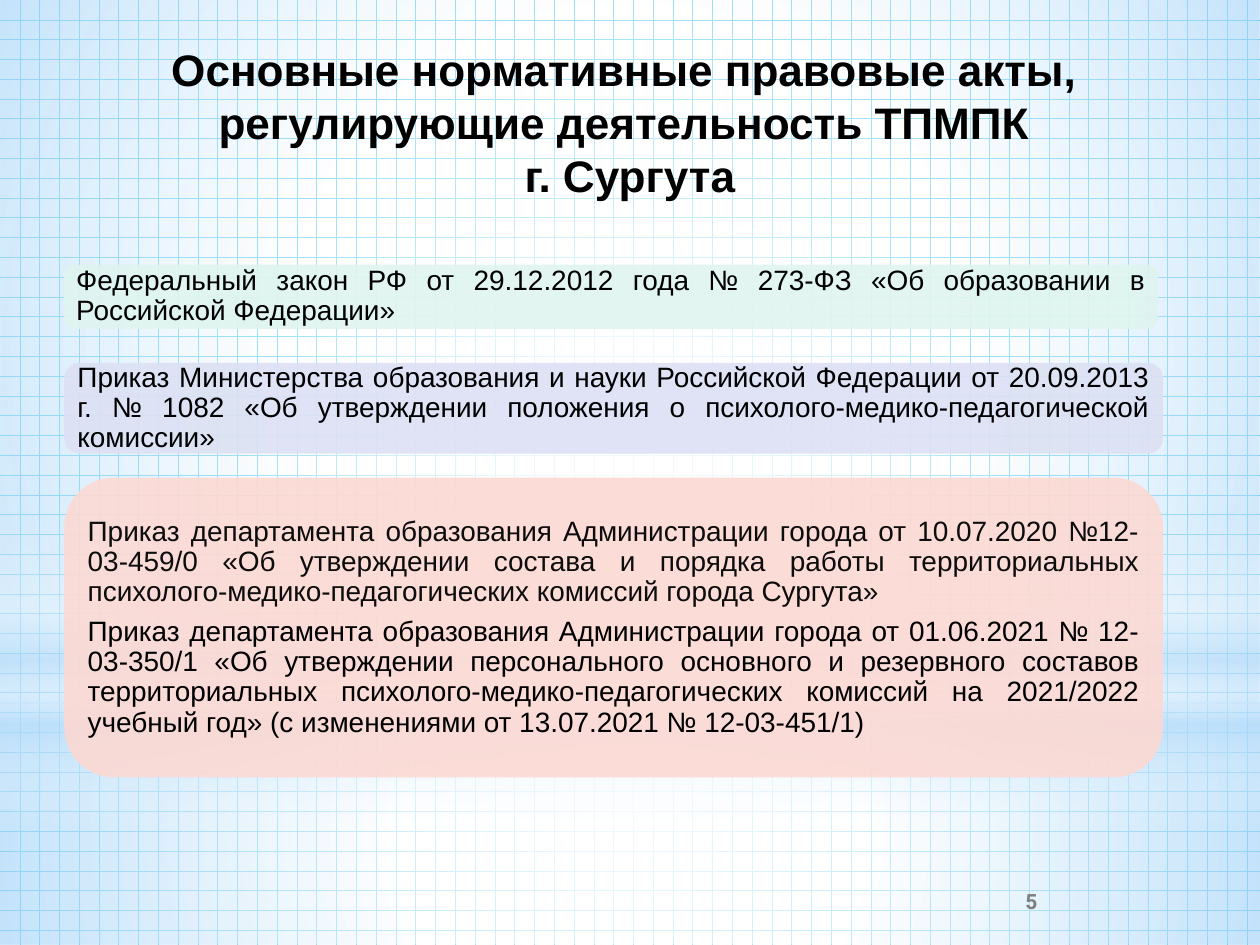
"""Build the slide listing the legal acts that govern the commission."""
from dataclasses import dataclass

from lxml import etree
from pptx import Presentation
from pptx.dml.color import RGBColor
from pptx.enum.dml import MSO_PATTERN
from pptx.enum.shapes import MSO_SHAPE
from pptx.enum.text import MSO_ANCHOR, PP_ALIGN
from pptx.oxml.ns import qn
from pptx.util import Inches, Pt

RECTANGLE, ELLIPSE, ROUNDED = MSO_SHAPE.RECTANGLE, MSO_SHAPE.OVAL, MSO_SHAPE.ROUNDED_RECTANGLE
DOTTED_GRID = MSO_PATTERN.DOTTED_GRID
TOP, MIDDLE = MSO_ANCHOR.TOP, MSO_ANCHOR.MIDDLE
CENTER, JUSTIFY = PP_ALIGN.CENTER, PP_ALIGN.JUSTIFY

BLACK = RGBColor(0x00, 0x00, 0x00)
NEAR_BLACK = RGBColor(0x0D, 0x0D, 0x0D)
GRAY = RGBColor(0x7F, 0x7F, 0x7F)
WHITE = RGBColor(0xFF, 0xFF, 0xFF)
SKY = RGBColor(0xB4, 0xDC, 0xFA)
GRID_BLUE = RGBColor(0x00, 0xB0, 0xF0)
MINT = RGBColor(0xDF, 0xF5, 0xEF)
LAVENDER = RGBColor(0xDC, 0xE1, 0xF4)
PINK = RGBColor(0xFC, 0xD9, 0xD3)

CARD_LEFT = 0.51
CARD_OPACITY = 90
CARD_INSET = Inches(0.07)
CARD_PARAGRAPH = {"alignment": JUSTIFY, "line_spacing": 0.9, "space_after": Pt(5.6)}
TITLE = "Основные нормативные правовые акты, \vрегулирующие деятельность ТПМПК \vг. Сургута"


@dataclass
class Glow:
    """A soft gradient area; each stop is position, colour and opacity in percent."""
    kind: int
    top: float
    height: float
    stops: list
    radial: bool = True


@dataclass
class Card:
    """A rounded card; each entry is a text and its colour."""
    top: float
    width: float
    height: float
    color: RGBColor
    entries: list


GLOWS = [
    Glow(RECTANGLE, 5.58, 1.92, [(0, WHITE, 91), (37, WHITE, 76), (100, SKY, 79)]),
    Glow(RECTANGLE, 0, 5.58, [(0, WHITE, 89), (48, WHITE, 62), (100, SKY, 79)]),
    Glow(RECTANGLE, 4.12, 2.5, [(0, WHITE, 0), (29, WHITE, 30), (45, SKY, 40),
                                (55, WHITE, 26), (65, SKY, 60), (100, WHITE, 0)], False),
    Glow(ELLIPSE, 1.75, 5.58, [(0, WHITE, 100), (56, WHITE, 0)]),
]

CARDS = [
    Card(2.1, 8.68, 0.51, MINT, [
        ("Федеральный закон РФ от 29.12.2012 года № 273-ФЗ «Об образовании в "
         "Российской Федерации»", BLACK)]),
    Card(2.88, 8.72, 0.72, LAVENDER, [
        ("Приказ Министерства образования и науки Российской Федерации от 20.09.2013 г. "
         "№ 1082 «Об утверждении положения о психолого-медико-педагогической комиссии»", BLACK)]),
    Card(3.79, 8.72, 2.38, PINK, [
        ("Приказ департамента образования Администрации города от 10.07.2020 №12-03-459/0 "
         "«Об утверждении состава и порядка работы территориальных "
         "психолого-медико-педагогических комиссий города Сургута»", NEAR_BLACK),
        ("Приказ департамента образования Администрации города от 01.06.2021 № 12-03-350/1 "
         "«Об утверждении персонального основного и резервного составов территориальных "
         "психолого-медико-педагогических комиссий на 2021/2022 учебный год» "
         "(с изменениями от 13.07.2021 № 12-03-451/1)", BLACK)]),
]


def apply(target: object, values: dict) -> None:
    """Set each named attribute on the target."""
    for name, value in values.items():
        setattr(target, name, value)


def add_alpha(color_element: etree.ElementBase, opacity: float) -> None:
    """Give a colour element an opacity in percent."""
    etree.SubElement(color_element, qn("a:alpha"), val=str(opacity * 1000))


def add_plain_shape(page, kind: int, left: float, top: float, width: float, height: float):
    """Add a shape without line or shadow."""
    shape = page.shapes.add_shape(kind, Inches(left), Inches(top), Inches(width), Inches(height))
    shape.shadow.inherit = False
    shape.line.fill.background()
    return shape


def add_glow(page, glow: Glow) -> None:
    """Draw a full-width gradient area."""
    shape = add_plain_shape(page, glow.kind, 0, glow.top, 10, glow.height)
    shape.fill.gradient()
    gradient = shape.element.spPr.find(qn("a:gradFill"))
    for child in list(gradient):
        gradient.remove(child)
    stop_list = etree.SubElement(gradient, qn("a:gsLst"))
    for position, color, opacity in glow.stops:
        stop = etree.SubElement(stop_list, qn("a:gs"), pos=str(position * 1000))
        add_alpha(etree.SubElement(stop, qn("a:srgbClr"), val=str(color)), opacity)
    if glow.radial:
        circle = etree.SubElement(gradient, qn("a:path"), {"path": "circle"})
        etree.SubElement(circle, qn("a:fillToRect"), dict.fromkeys("ltrb", "50000"))
    else:
        etree.SubElement(gradient, qn("a:lin"), ang="5400000", scaled="0")


def write(paragraph, text: str, layout: dict, font: dict, color: RGBColor) -> None:
    """Fill a paragraph with formatted text."""
    paragraph.text = text
    apply(paragraph, layout)
    for span in paragraph.runs:
        apply(span.font, font)
        span.font.color.rgb = color


def add_card(page, card: Card) -> None:
    """Draw a translucent rounded card with its justified text."""
    shape = add_plain_shape(page, ROUNDED, CARD_LEFT, card.top, card.width, card.height)
    shape.fill.solid()
    shape.fill.fore_color.rgb = card.color
    add_alpha(shape.element.spPr.find(qn("a:solidFill")).find(qn("a:srgbClr")), CARD_OPACITY)
    frame = shape.text_frame
    sides = ("margin_left", "margin_top", "margin_right", "margin_bottom")
    apply(frame, {"word_wrap": True, "vertical_anchor": MIDDLE, **dict.fromkeys(sides, CARD_INSET)})
    for index, (text, color) in enumerate(card.entries):
        paragraph = frame.add_paragraph() if index else frame.paragraphs[0]
        write(paragraph, text, CARD_PARAGRAPH, {"name": "Arial", "size": Pt(16)}, color)


def add_label(page, bounds: tuple, text: str, anchor: int, font: dict, color: RGBColor):
    """Add a centred bold text box and return its paragraph."""
    box = page.shapes.add_textbox(*map(Inches, bounds))
    apply(box.text_frame, {"word_wrap": True, "vertical_anchor": anchor})
    paragraph = box.text_frame.paragraphs[0]
    write(paragraph, text, {"alignment": CENTER}, {"bold": True, **font}, color)
    return paragraph


def main() -> None:
    """Build and save the deck."""
    deck = Presentation()
    apply(deck, {"slide_width": Inches(10), "slide_height": Inches(7.5)})
    page = deck.slides.add_slide(deck.slide_layouts[6])
    backdrop = page.background.fill
    backdrop.patterned()
    backdrop.pattern = DOTTED_GRID
    backdrop.fore_color.rgb = GRID_BLUE
    backdrop.back_color.rgb = WHITE
    for glow in GLOWS:
        add_glow(page, glow)
    title = add_label(page, (0, 0.29, 10, 1.25), TITLE, TOP,
                      {"name": "Arial", "size": Pt(25.2)}, BLACK)
    indent = Inches(0.35)
    apply(title._p.get_or_add_pPr(), {"marL": indent, "indent": -indent})
    for card in CARDS:
        add_card(page, card)
    add_label(page, (7.06, 6.95, 2.25, 0.4), "5", MIDDLE,
              {"name": "Roboto", "size": Pt(12)}, GRAY)
    deck.save("out.pptx")


if __name__ == "__main__":
    main()
